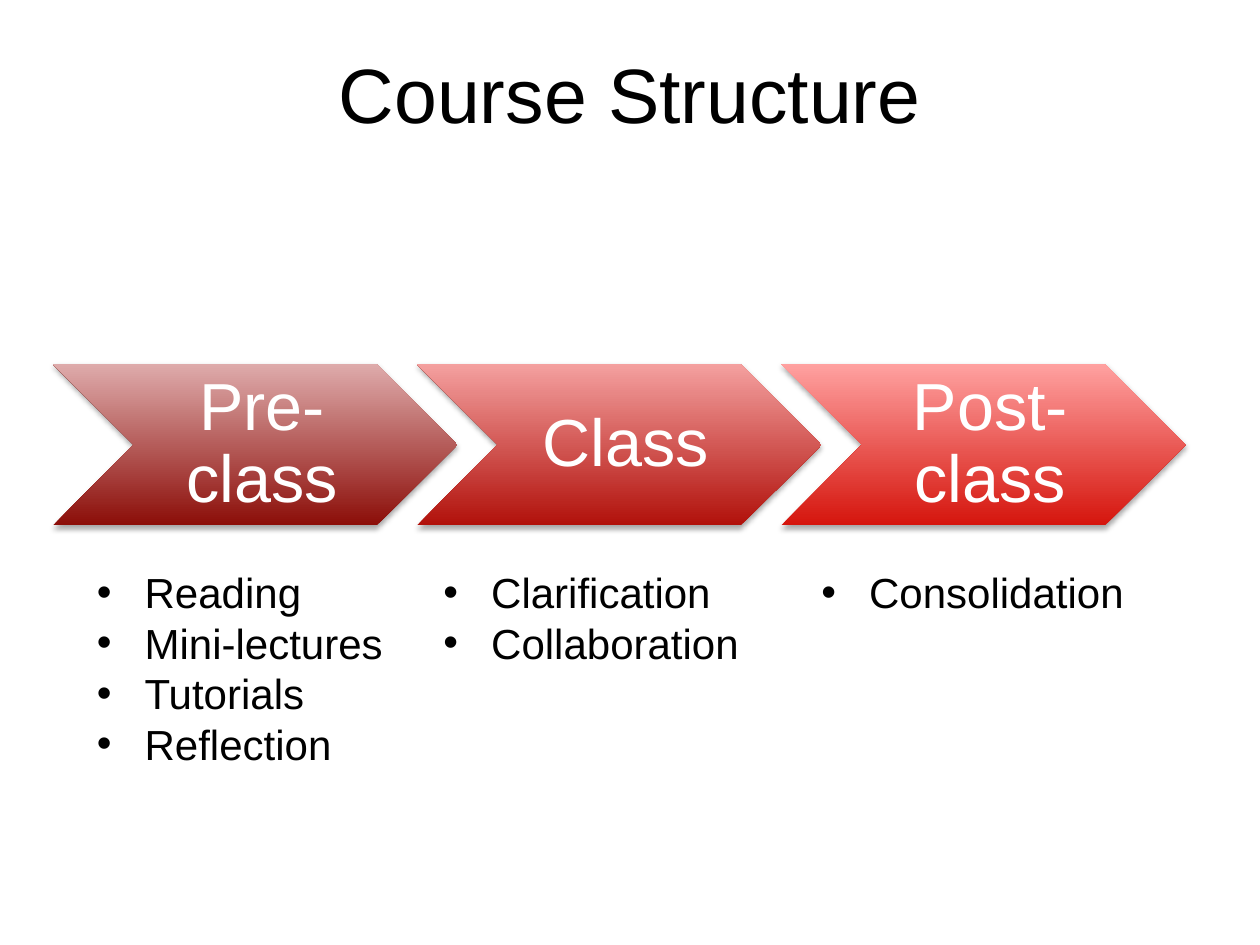
from dataclasses import dataclass

from lxml import etree
from pptx import Presentation
from pptx.dml.color import RGBColor
from pptx.enum.shapes import MSO_SHAPE
from pptx.enum.text import MSO_ANCHOR, MSO_AUTO_SIZE, PP_ALIGN
from pptx.oxml.ns import qn
from pptx.util import Pt

CHEVRON = MSO_SHAPE.CHEVRON
LEFT, CENTER = PP_ALIGN.LEFT, PP_ALIGN.CENTER
TOP, MIDDLE = MSO_ANCHOR.TOP, MSO_ANCHOR.MIDDLE
GROW, FIXED = MSO_AUTO_SIZE.SHAPE_TO_FIT_TEXT, MSO_AUTO_SIZE.NONE
EMU_PER_PX = 9144


@dataclass(frozen=True)
class Theme:
    font: str = "Arial"
    ink: str = "000000"
    paper: str = "FFFFFF"
    title_size: int = 44
    stage_size: int = 38
    list_size: int = 24


THEME = Theme()
STAGES = [
    ("Pre-class", "8C0E09", "DEABAB"),
    ("Class", "B1110B", "F4A09F"),
    ("Post-class", "D5150D", "FFA1A0"),
]
ACTIVITIES = [
    ((67, 445, 250, 172), ["Reading", "Mini-lectures", "Tutorials", "Reflection"]),
    ((342, 445, 258, 91), ["Clarification", "Collaboration"]),
    ((642, 445, 263, 50), ["Consolidation"]),
]


def px(value):
    return value * EMU_PER_PX


def scaled(box):
    return [px(value) for value in box]


def add_bullet(para, indent):
    properties = para._p.get_or_add_pPr()
    properties.set("marL", str(px(indent)))
    properties.set("indent", str(-px(indent)))
    etree.SubElement(properties, qn("a:buFont"), typeface=THEME.font)
    etree.SubElement(properties, qn("a:buChar"), char="•")


def write_text(shape, lines, size, color=THEME.ink, align=LEFT, anchor=TOP,
               margins=(10, 5, 10, 5), wrap=True, fit=FIXED, spacing=None, bullet_indent=0):
    frame = shape.text_frame
    frame.word_wrap = wrap
    frame.auto_size = fit
    frame.vertical_anchor = anchor
    (frame.margin_left, frame.margin_top,
     frame.margin_right, frame.margin_bottom) = scaled(margins)
    for index, line in enumerate(lines):
        para = frame.add_paragraph() if index else frame.paragraphs[0]
        para.alignment = align
        if spacing:
            para.line_spacing = spacing
        if bullet_indent:
            add_bullet(para, bullet_indent)
        span = para.add_run()
        span.text = line
        span.font.name = THEME.font
        span.font.size = Pt(size)
        span.font.color.rgb = RGBColor.from_string(color)


def add_shadow(shape):
    shape.shadow.inherit = False
    effects = shape._element.spPr.find(qn("a:effectLst"))
    shadow = etree.SubElement(effects, qn("a:outerShdw"), blurRad="40000", dist="23000",
                              dir="5400000", rotWithShape="0")
    color = etree.SubElement(shadow, qn("a:srgbClr"), val=THEME.ink)
    etree.SubElement(color, qn("a:alpha"), val="35000")


def place_title(page, box):
    title = page.shapes.title
    title.left, title.top, title.width, title.height = scaled(box)
    write_text(title, ["Course Structure"], THEME.title_size, align=CENTER, anchor=MIDDLE)


def add_stage(group, box, name, dark, light):
    left, top, width, height = box
    arrow = group.shapes.add_shape(CHEVRON, *scaled(box))
    arrow.fill.gradient()
    arrow.fill.gradient_angle = 90
    for stop, color in zip(arrow.fill.gradient_stops, (dark, light)):
        stop.color.rgb = RGBColor.from_string(color)
    arrow.line.fill.background()
    add_shadow(arrow)
    inset = height // 2
    label = group.shapes.add_textbox(*scaled((left + inset, top, width - 2 * inset, height)))
    write_text(label, [name], THEME.stage_size, color=THEME.paper, align=CENTER,
               anchor=MIDDLE, margins=(17, 6, 6, 6), spacing=0.9)


def add_process(page, box, stage_width):
    left, top, width, height = box
    step = (width - stage_width) // (len(STAGES) - 1)
    group = page.shapes.add_group_shape()
    for index, stage in enumerate(STAGES):
        add_stage(group, (left + index * step, top, stage_width, height), *stage)


def add_activities(page, box, lines):
    listing = page.shapes.add_textbox(*scaled(box))
    write_text(listing, lines, THEME.list_size, wrap=False, fit=GROW,
               margins=(10, 5, 5, 5), bullet_indent=38)


def main():
    deck = Presentation()
    deck.slide_width, deck.slide_height = px(1000), px(750)
    page = deck.slides.add_slide(deck.slide_layouts[5])
    page.background.fill.solid()
    page.background.fill.fore_color.rgb = RGBColor.from_string(THEME.paper)
    place_title(page, (50, 30, 900, 87))
    add_process(page, (42, 289, 899, 128), stage_width=321)
    for box, lines in ACTIVITIES:
        add_activities(page, box, lines)
    deck.save("out.pptx")


if __name__ == "__main__":
    main()
